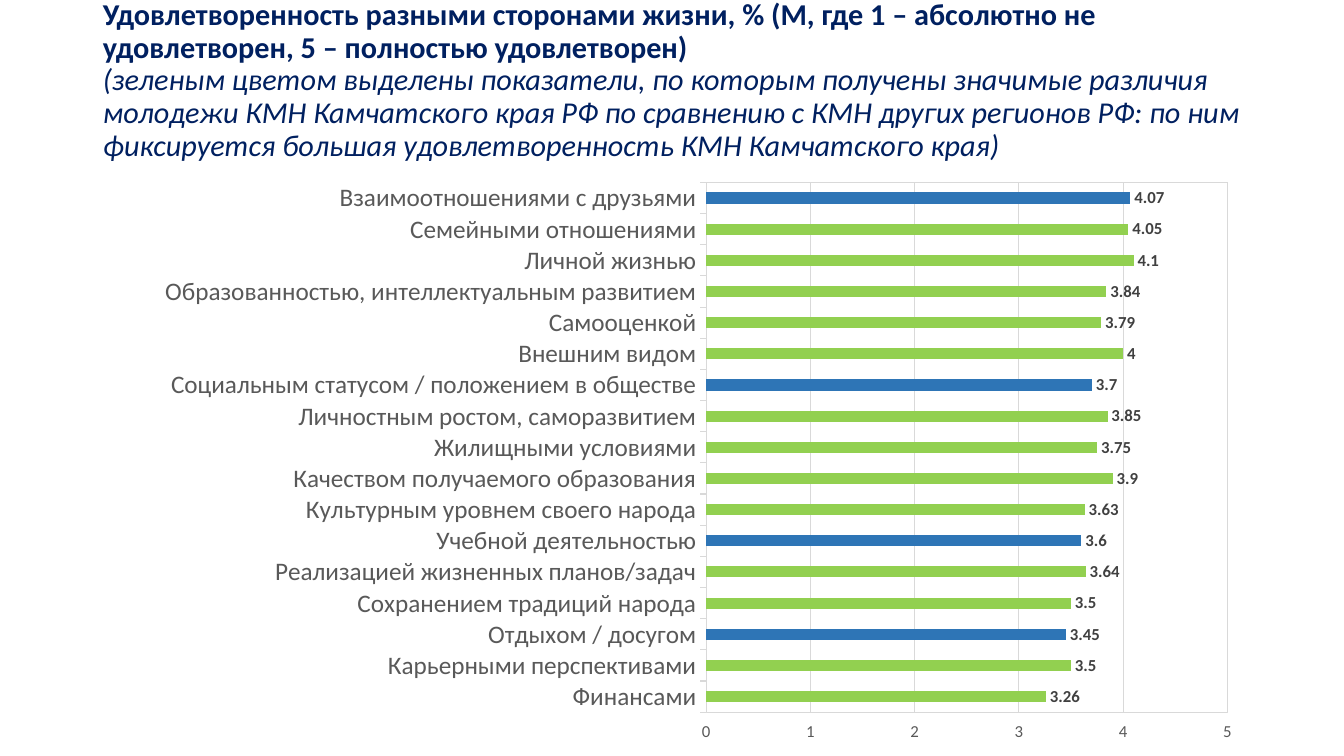
"""Build a slide with a bar chart of satisfaction with different sides of life."""
from copy import deepcopy

from lxml import etree
from pptx import Presentation
from pptx.chart.data import CategoryChartData
from pptx.dml.color import RGBColor
from pptx.enum.chart import XL_CHART_TYPE, XL_LABEL_POSITION, XL_TICK_MARK
from pptx.enum.text import MSO_ANCHOR, MSO_AUTO_SIZE, PP_ALIGN
from pptx.oxml import parse_xml
from pptx.oxml.ns import nsdecls, qn
from pptx.util import Pt

BAR = XL_CHART_TYPE.BAR_CLUSTERED
OUTSIDE_END = XL_LABEL_POSITION.OUTSIDE_END
TICK_OUT = XL_TICK_MARK.OUTSIDE
MIDDLE = MSO_ANCHOR.MIDDLE
NO_FIT = MSO_AUTO_SIZE.NONE
LEFT = PP_ALIGN.LEFT

FONT = "Calibri"
NAVY, BLUE, GREEN = "002060", "2E75B6", "92D050"
GRID, AXIS_TEXT, LABEL_TEXT = "D9D9D9", "595959", "404040"

HEADING = ("Удовлетворенность разными сторонами жизни, % (M, где 1 – абсолютно не "
           "удовлетворен, 5 – полностью удовлетворен)")
REMARK = ("(зеленым цветом выделены показатели, по которым получены значимые различия "
          "молодежи КМН Камчатского края РФ по сравнению с КМН других регионов РФ: по ним "
          "фиксируется большая удовлетворенность КМН Камчатского края)")

ROWS = [
    ("Финансами", 3.26, GREEN),
    ("Карьерными перспективами", 3.5, GREEN),
    ("Отдыхом / досугом", 3.45, BLUE),
    ("Сохранением традиций народа", 3.5, GREEN),
    ("Реализацией жизненных планов/задач", 3.64, GREEN),
    ("Учебной деятельностью", 3.6, BLUE),
    ("Культурным уровнем своего народа", 3.63, GREEN),
    ("Качеством получаемого образования", 3.9, GREEN),
    ("Жилищными условиями", 3.75, GREEN),
    ("Личностным ростом, саморазвитием", 3.85, GREEN),
    ("Социальным статусом / положением в обществе", 3.7, BLUE),
    ("Внешним видом", 4, GREEN),
    ("Самооценкой", 3.79, GREEN),
    ("Образованностью, интеллектуальным развитием", 3.84, GREEN),
    ("Личной жизнью", 4.1, GREEN),
    ("Семейными отношениями", 4.05, GREEN),
    ("Взаимоотношениями с друзьями", 4.07, BLUE),
]


def rgb(value):
    return RGBColor.from_string(value)


def set_font(font, size, color, bold=False, italic=False):
    font.name, font.size = FONT, Pt(size)
    font.bold, font.italic = bold, italic
    font.color.rgb = rgb(color)


prs = Presentation()
prs.slide_width, prs.slide_height = Pt(960), Pt(540)
s = prs.slides.add_slide(prs.slide_layouts[5])

title = s.shapes.title
title.left, title.top, title.width, title.height = Pt(66.24), Pt(14.4), Pt(828), Pt(87.12)
tf = title.text_frame
tf.word_wrap, tf.auto_size, tf.vertical_anchor = True, NO_FIT, MIDDLE
p = tf.paragraphs[0]
p.alignment, p.line_spacing = LEFT, 0.9
r = p.add_run()
r.text = HEADING
set_font(r.font, 21.6, NAVY, bold=True)
p.add_line_break()
p._p.find(qn("a:br")).append(deepcopy(r._r.rPr))
r = p.add_run()
r.text = REMARK
set_font(r.font, 21.6, NAVY, italic=True)

data = CategoryChartData()
data.categories = [name for name, _, _ in ROWS]
data.add_series("Series 1", [value for _, value, _ in ROWS])
chart = s.shapes.add_chart(BAR, Pt(22.32), Pt(118.08), Pt(871.92), Pt(421.92), data).chart
chart.has_title = chart.has_legend = False
set_font(chart.font, 10, "000000")

plot = chart.plots[0]
plot.gap_width, plot.vary_by_categories = 182, False
series = plot.series[0]
series.format.fill.solid()
series.format.fill.fore_color.rgb = rgb(BLUE)
for i, (_, _, color) in enumerate(ROWS):
    if color != BLUE:
        fill = series.points[i].format.fill
        fill.solid()
        fill.fore_color.rgb = rgb(color)

labels = series.data_labels
labels.show_value, labels.position = True, OUTSIDE_END
set_font(labels.font, 12, LABEL_TEXT, bold=True)

cat, val = chart.category_axis, chart.value_axis
val.minimum_scale, val.maximum_scale, val.major_unit = 0, 5, 1
val.has_major_gridlines = True
for axis, size in ((cat, 18), (val, 12)):
    axis.major_tick_mark = TICK_OUT
    set_font(axis.tick_labels.font, size, AXIS_TEXT)
for line in (cat.format.line, val.major_gridlines.format.line):
    line.color.rgb, line.width = rgb(GRID), Pt(0.75)
val.format.line.fill.background()

area = chart._chartSpace.chart.plotArea
for old in area.findall(qn("c:layout")):
    area.remove(old)
layout = parse_xml(f'<c:layout {nsdecls("c")}><c:manualLayout/></c:layout>')
for tag, value in (("layoutTarget", "inner"), ("xMode", "edge"), ("yMode", "edge"),
                   ("x", 0.553), ("y", 0.029), ("w", 0.427), ("h", 0.897)):
    etree.SubElement(layout[0], qn(f"c:{tag}")).set("val", str(value))
area.insert(0, layout)
area.append(parse_xml(
    f'<c:spPr {nsdecls("c", "a")}><a:noFill/><a:ln w="9525"><a:solidFill>'
    f'<a:srgbClr val="{GRID}"/></a:solidFill></a:ln></c:spPr>'))

prs.save("out.pptx")
